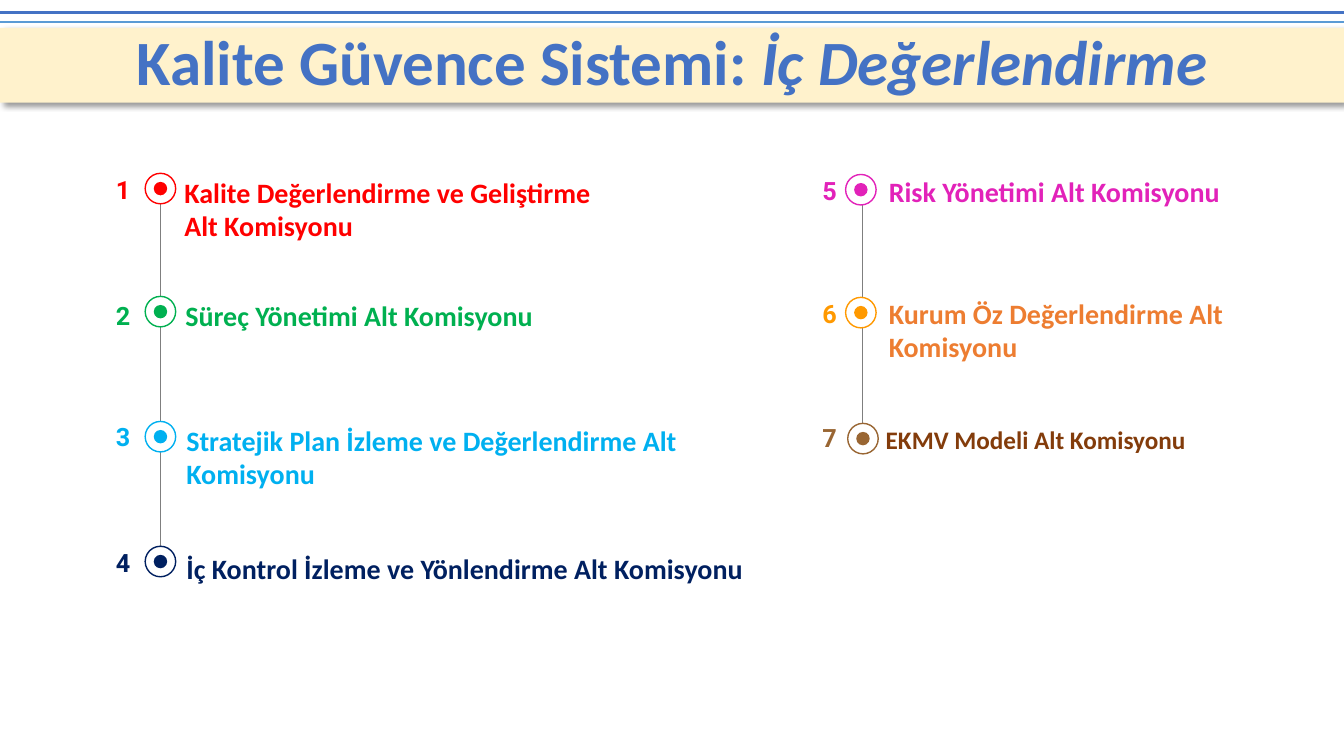
from itertools import pairwise
from lxml.etree import SubElement
from pptx import Presentation
from pptx.dml.color import RGBColor
from pptx.enum.shapes import MSO_CONNECTOR as Line, MSO_SHAPE as Shape
from pptx.enum.text import MSO_ANCHOR as Anchor, PP_ALIGN as Align
from pptx.oxml import parse_xml
from pptx.oxml.ns import qn
from pptx.util import Pt

# Content
TITLE = ("Kalite Güvence Sistemi: ", "İç Değerlendirme")
# Each commission: label, colour, ring (left, top), number top, label (left, top, width)
LEFT = [
    ("Kalite Değerlendirme ve Geliştirme\nAlt Komisyonu", "red",
     (103.7, 123.8), 121, (124.6, 121.7, 458)),
    ("Süreç Yönetimi Alt Komisyonu", "green",
     (103.7, 211.7), 211, (125.3, 209.5, 321)),
    ("Stratejik Plan İzleme ve Değerlendirme Alt Komisyonu", "sky",
     (103.7, 301), 297.4, (126, 298.8, 450)),
    ("İç Kontrol İzleme ve Yönlendirme Alt Komisyonu", "navy",
     (103.7, 390.2), 387.4, (126, 390.2, 425)),
]
RIGHT = [
    ("Risk Yönetimi Alt Komisyonu", "magenta",
     (604, 124.6), 121.7, (627.8, 121, 271.4)),
    ("Kurum Öz Değerlendirme Alt Komisyonu", "amber",
     (604, 212.4), 209.5, (627.8, 208, 306.7)),
    ("EKMV Modeli Alt Komisyonu", "brown",
     (605.5, 302.4), 298.1, (615.6, 299.5, 248.4)),
]
# Columns: commissions, left of the numbers, x of the timeline
COLUMNS = [(LEFT, 20.9, 114.5), (RIGHT, 525.6, 616.3)]

THEME = {
    "red": "FF0000", "green": "00B050", "sky": "00B0F0", "navy": "002060",
    "magenta": "E222B9", "amber": "FF9900", "brown": "996633",
    "title": "4472C4", "rule": "5B9BD5", "banner": "FFF2CC", "timeline": "7F7F7F",
    "label_colours": {"amber": "ED7D31", "brown": "833C0B"},
    "label_sizes": {"brown": 18},
    "label_size": 20, "number_size": 18, "title_size": 45,
    "font": "Calibri", "number_font": "Roboto",
}
WIDTH, HEIGHT = 960, 540
RING, DOT = 21.8, 9.6
NUMBER_WIDTH, NUMBER_HEIGHT, LABEL_HEIGHT = 79.2, 29, 32

deck = Presentation()
deck.slide_width, deck.slide_height = Pt(WIDTH), Pt(HEIGHT)
slide = deck.slides.add_slide(deck.slide_layouts[6])


def rgb(value):
    return RGBColor.from_string(THEME.get(value, value))


def add_line(x1, y1, x2, y2, colour, weight):
    line = slide.shapes.add_connector(Line.STRAIGHT, Pt(x1), Pt(y1), Pt(x2), Pt(y2))
    line.line.color.rgb = rgb(colour)
    line.line.width = Pt(weight)
    SubElement(line._element.spPr, qn("a:effectLst"))


def add_shape(kind, left, top, width, height, fill=None, outline=None):
    shape = slide.shapes.add_shape(kind, Pt(left), Pt(top), Pt(width), Pt(height))
    shape.shadow.inherit = False
    if fill:
        shape.fill.solid()
        shape.fill.fore_color.rgb = rgb(fill)
    else:
        shape.fill.background()
    if outline:
        shape.line.color.rgb = rgb(outline)
        shape.line.width = Pt(1)
    else:
        shape.line.fill.background()
    return shape


def set_font(paragraph, name, size, colour):
    font = paragraph.font
    font.name, font.size, font.bold = name, Pt(size), True
    font.color.rgb = rgb(colour)


def add_text(text, left, top, width, height, name, size, colour, align=Align.LEFT):
    frame = slide.shapes.add_textbox(Pt(left), Pt(top), Pt(width), Pt(height)).text_frame
    frame.word_wrap = True
    frame.text = text
    for paragraph in frame.paragraphs:
        paragraph.alignment = align
        set_font(paragraph, name, size, colour)


# Rules at the top
add_line(0, 9.2, WIDTH, 9.2, "title", 2.25)
add_line(0, 15.8, WIDTH, 15.8, "rule", 1)

# Title banner with a soft shadow
banner = add_shape(Shape.RECTANGLE, 0, 20, WIDTH, 53.4, "banner")
banner._element.spPr.find(qn("a:effectLst")).append(parse_xml(
    '<a:outerShdw xmlns:a="http://schemas.openxmlformats.org/drawingml/2006/main"'
    ' blurRad="50800" dist="38100" dir="2700000" algn="tl" rotWithShape="0">'
    '<a:srgbClr val="000000"><a:alpha val="40000"/></a:srgbClr></a:outerShdw>'))
banner.text_frame.vertical_anchor = Anchor.MIDDLE
heading = banner.text_frame.paragraphs[0]
heading.alignment, heading.line_spacing = Align.CENTER, 0.9
set_font(heading, THEME["font"], THEME["title_size"], "title")
for part in TITLE:
    run = heading.add_run()
    run.text = part
run.font.italic = True

# Commissions, numbered down the two columns
number = 0
for commissions, number_left, timeline in COLUMNS:
    # Timeline between neighbouring rings
    for upper, lower in pairwise(commissions):
        add_line(timeline, upper[2][1] + RING, timeline, lower[2][1], "timeline", 0.75)

    for label, colour, (ring_left, ring_top), number_top, (left, top, width) in commissions:
        number += 1
        inset = (RING - DOT) / 2
        add_shape(Shape.OVAL, ring_left, ring_top, RING, RING, outline=colour)
        add_shape(Shape.OVAL, ring_left + inset, ring_top + inset, DOT, DOT, fill=colour)
        add_text(str(number), number_left, number_top, NUMBER_WIDTH, NUMBER_HEIGHT,
                 THEME["number_font"], THEME["number_size"], colour, Align.RIGHT)
        add_text(label, left, top, width, LABEL_HEIGHT, THEME["font"],
                 THEME["label_sizes"].get(colour, THEME["label_size"]),
                 THEME["label_colours"].get(colour, colour),
                 Align.CENTER if colour == "brown" else Align.LEFT)

deck.save("out.pptx")
